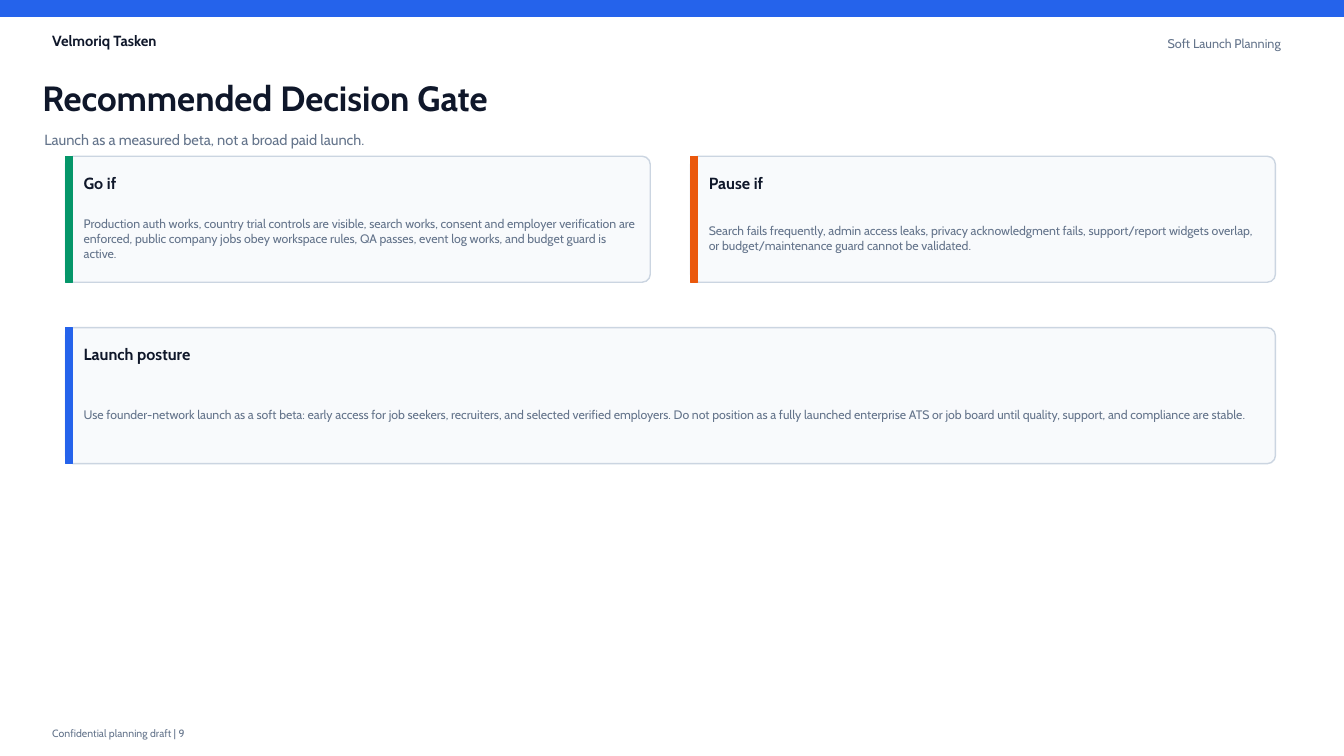
from dataclasses import dataclass
from pptx import Presentation
from pptx.dml.color import RGBColor
from pptx.enum import shapes, text
from pptx.util import Inches, Pt

FONT = "Cabin"
COLORS = {
    "blue": "2563EB",
    "green": "059669",
    "orange": "EA580C",
    "ink": "0F172A",
    "muted": "64748B",
    "panel": "F8FAFC",
    "border": "CBD5E1",
}
RADIUS = 0.08
ACCENT_WIDTH = 0.07
TEXT_INDENT = 0.18


@dataclass(frozen=True)
class Box:
    left: float
    top: float
    width: float
    height: float

    def lengths(self):
        return [Inches(v) for v in (self.left, self.top, self.width, self.height)]


@dataclass(frozen=True)
class Label:
    box: Box
    wording: str
    size: float
    color: str = "muted"
    bold: bool = False
    inset: bool = False
    align: text.PP_ALIGN = text.PP_ALIGN.LEFT


@dataclass(frozen=True)
class Card:
    box: Box
    accent: str
    heading: str
    details: str


def rgb(name: str) -> RGBColor:
    return RGBColor.from_string(COLORS[name])


def write_label(holder, label: Label) -> None:
    frame = holder.text_frame
    frame.text = label.wording
    frame.word_wrap = True
    frame.auto_size = text.MSO_AUTO_SIZE.NONE
    frame.vertical_anchor = text.MSO_ANCHOR.MIDDLE
    if not label.inset:
        frame.margin_left = frame.margin_right = 0
        frame.margin_top = frame.margin_bottom = 0
    paragraph = frame.paragraphs[0]
    paragraph.alignment = label.align
    font = paragraph.runs[0].font
    font.name = FONT
    font.size = Pt(label.size)
    font.bold = label.bold
    font.color.rgb = rgb(label.color)


def add_label(slide, label: Label) -> None:
    write_label(slide.shapes.add_textbox(*label.box.lengths()), label)


def add_panel(slide, box: Box, fill: str, line: str, radius: float = 0) -> None:
    kind = shapes.MSO_SHAPE.ROUNDED_RECTANGLE if radius else shapes.MSO_SHAPE.RECTANGLE
    panel = slide.shapes.add_shape(kind, *box.lengths())
    if radius:
        panel.adjustments[0] = radius / min(box.width, box.height)
    panel.shadow.inherit = False
    panel.fill.solid()
    panel.fill.fore_color.rgb = rgb(fill)
    panel.line.color.rgb = rgb(line)
    panel.line.width = Pt(1)


def add_card(slide, card: Card) -> None:
    box = card.box
    left = box.left + TEXT_INDENT
    add_panel(slide, box, "panel", "border", RADIUS)
    add_panel(slide, Box(box.left, box.top, ACCENT_WIDTH, box.height), card.accent, card.accent)
    heading_box = Box(left, box.top + 0.14, box.width - 0.3, 0.25)
    details_box = Box(left, box.top + 0.48, box.width - 0.28, box.height - 0.58)
    add_label(slide, Label(heading_box, card.heading, 11.5, "ink", bold=True))
    add_label(slide, Label(details_box, card.details, 8.8))


TITLE = Label(Box(0.42, 0.72, 8.7, 0.5), "Recommended Decision Gate", 25, "ink", bold=True)

LABELS = [
    Label(Box(0.42, 0.28, 2.3, 0.25), "Velmoriq Tasken", 10.5, "ink", bold=True, inset=True),
    Label(Box(0.44, 1.22, 9.5, 0.34), "Launch as a measured beta, not a broad paid launch.", 10.5),
    Label(Box(10.35, 0.3, 2.45, 0.26), "Soft Launch Planning", 9, inset=True,
          align=text.PP_ALIGN.RIGHT),
    Label(Box(0.42, 7.18, 4.6, 0.2), "Confidential planning draft | 9", 7.5, inset=True),
]

CARDS = [
    Card(Box(0.65, 1.55, 5.8, 1.25), "green", "Go if",
         "Production auth works, country trial controls are visible, search works, consent and "
         "employer verification are enforced, public company jobs obey workspace rules, QA passes, "
         "event log works, and budget guard is active."),
    Card(Box(6.85, 1.55, 5.8, 1.25), "orange", "Pause if",
         "Search fails frequently, admin access leaks, privacy acknowledgment fails, "
         "support/report widgets overlap, or budget/maintenance guard cannot be validated."),
    Card(Box(0.65, 3.25, 12, 1.35), "blue", "Launch posture",
         "Use founder-network launch as a soft beta: early access for job seekers, recruiters, and "
         "selected verified employers. Do not position as a fully launched enterprise ATS or job "
         "board until quality, support, and compliance are stable."),
]


def main() -> None:
    deck = Presentation()
    deck.slide_width = Inches(13.33)
    deck.slide_height = Inches(7.5)
    slide = deck.slides.add_slide(deck.slide_layouts[5])

    title = slide.shapes.title
    title.left, title.top, title.width, title.height = TITLE.box.lengths()
    write_label(title, TITLE)

    add_panel(slide, Box(0, 0, 13.33, 0.16), "blue", "blue")
    for label in LABELS:
        add_label(slide, label)
    for card in CARDS:
        add_card(slide, card)

    deck.save("out.pptx")


if __name__ == "__main__":
    main()
